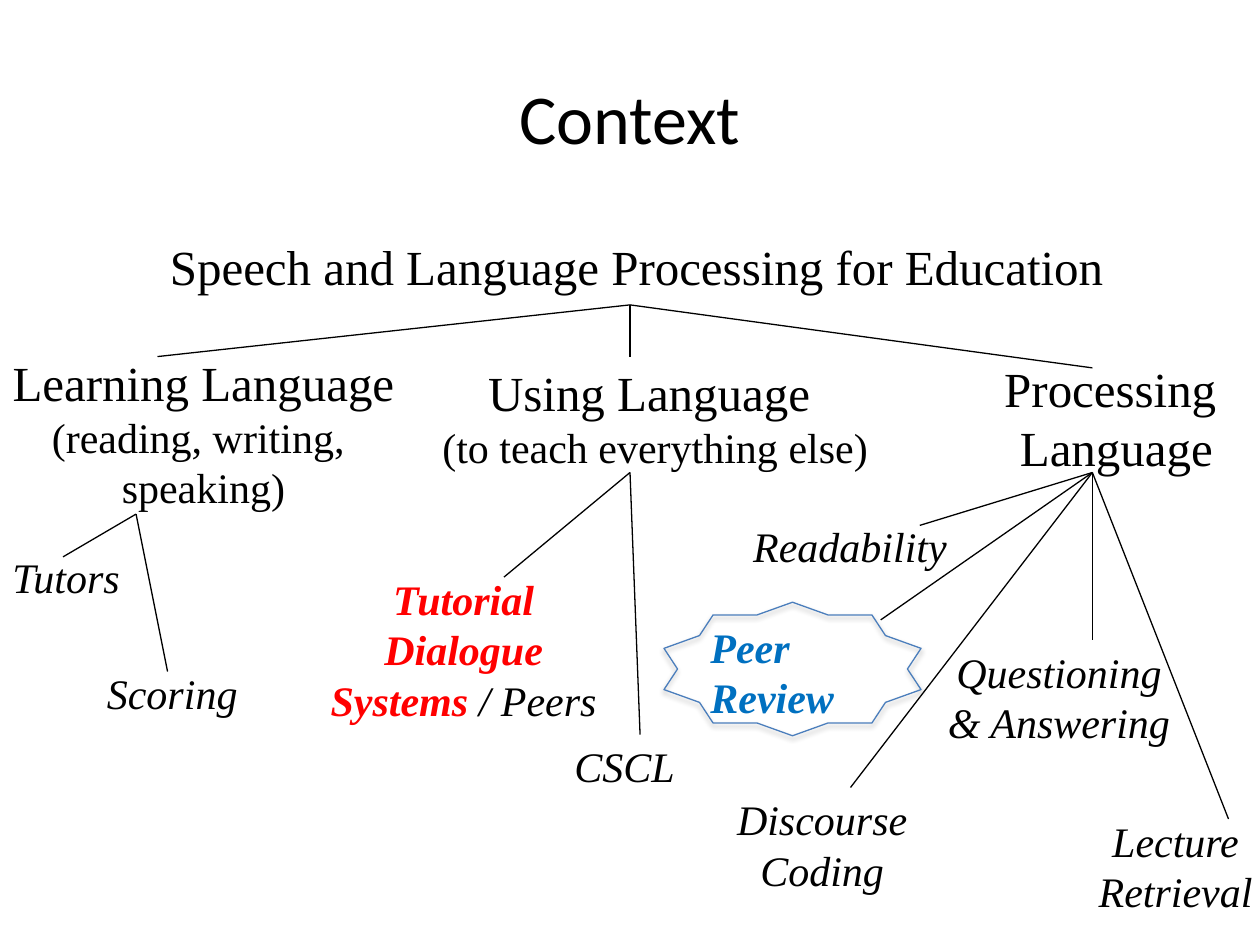
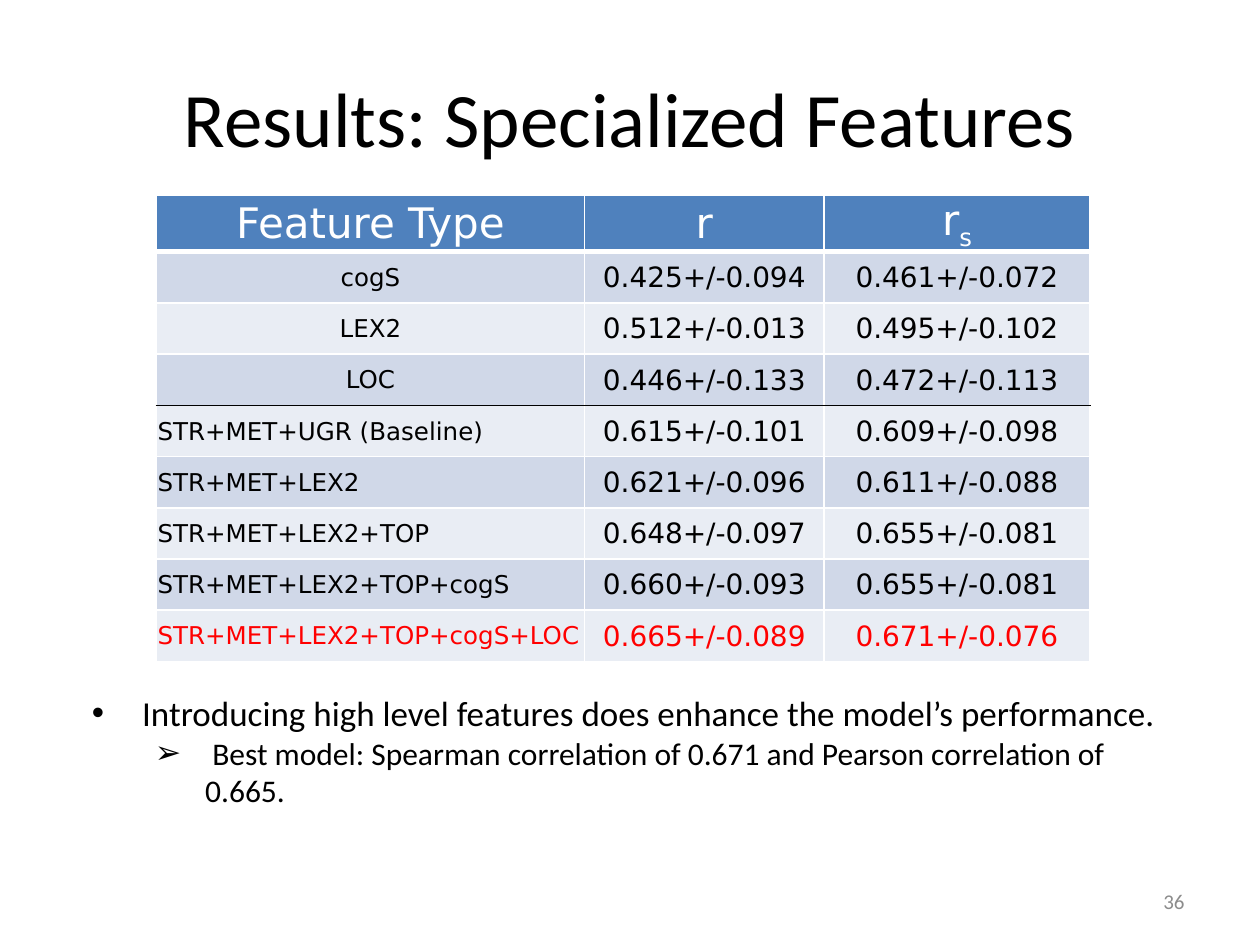
import lxml.etree
import pptx
import pptx.dml.color
import pptx.enum.shapes
import pptx.enum.text
import pptx.oxml.ns
import pptx.util

Inches = pptx.util.Inches
Pt = pptx.util.Pt
qn = pptx.oxml.ns.qn
Align = pptx.enum.text.PP_ALIGN
Anchor = pptx.enum.text.MSO_ANCHOR
Fit = pptx.enum.text.MSO_AUTO_SIZE


class Theme:
    sans, serif, grid, mark = "Calibri", "Times New Roman", "DejaVu Sans", "Arial"
    black, white, red, blue = "000000", "FFFFFF", "FF0000", "0070C0"
    gray, edge, head = "8C8C8C", "4B7EBC", "4F81BD"
    bands = ("D0D8E8", "E9EDF4")
    topic, leaf = 28, 24
    point, detail, page = 20, 18, 12
    label, value = 14, 16
    rule = 0.75


def tint(code):
    return pptx.dml.color.RGBColor.from_string(code)


def child(node, tag, **attrs):
    return lxml.etree.SubElement(node, qn(tag), attrs)


def style(run, size=Theme.leaf, font=Theme.serif, color=Theme.black,
          bold=False, slant=False, base=None):
    run.font.size = Pt(size)
    run.font.name = font
    run.font.color.rgb = tint(color)
    run.font.bold = bold
    run.font.italic = slant
    if base:
        run.font._element.set("baseline", str(base * 1000))


def write(frame, lines, align=Align.LEFT, **look):
    for i, line in enumerate(lines):
        para = frame.paragraphs[0] if i == 0 else frame.add_paragraph()
        para.alignment = align
        parts = [(line, {})] if isinstance(line, str) else line
        for words, extra in parts:
            run = para.add_run()
            run.text = words
            style(run, **{**look, **extra})


def text(slide, box, *lines, wrap=True, grow=False, anchor=Anchor.TOP, **look):
    frame = slide.shapes.add_textbox(*map(Inches, box)).text_frame
    frame.word_wrap = wrap
    frame.auto_size = Fit.SHAPE_TO_FIT_TEXT if grow else Fit.NONE
    frame.vertical_anchor = anchor
    write(frame, lines, **look)
    return frame


def title(slide, words, size):
    text(slide, (0.5, 0.3, 9, 1.25), words, size=size, font=Theme.sans,
         align=Align.CENTER, anchor=Anchor.MIDDLE)


def branch(slide, start, end):
    line = slide.shapes.add_connector(
        pptx.enum.shapes.MSO_CONNECTOR.STRAIGHT, *map(Inches, (*start, *end)))
    line.line.color.rgb = tint(Theme.black)
    line.line.width = Pt(Theme.rule)
    child(line._element.spPr, "a:effectLst")


def star(slide, box):
    shape = slide.shapes.add_shape(
        pptx.enum.shapes.MSO_SHAPE.STAR_10_POINT, *map(Inches, box))
    shape.fill.background()
    shape.line.color.rgb = tint(Theme.edge)
    shape.line.width = Pt(Theme.rule)
    shape.shadow.inherit = False
    effects = shape._element.spPr.find(qn("a:effectLst"))
    shade = child(effects, "a:outerShdw", blurRad=str(Pt(3.1)),
                  dist=str(Pt(1.8)), dir="5400000", rotWithShape="0")
    color = child(shade, "a:srgbClr", val=Theme.black)
    child(color, "a:alpha", val="35000")


def tree(slide, box):
    left, top = box[:2]
    mid = Align.CENTER
    big = {"size": Theme.topic}
    plain = {"color": Theme.black, "bold": False}
    topics = [
        ((1.25, 0.08, 7.69, 0.57), Align.LEFT,
         [[("Speech and Language Processing for Education", big)]]),
        ((0, 1, 3.23, 1.77), mid,
         [[("Learning Language", big)], "(reading, writing, ", "speaking)"]),
        ((3.3, 1.08, 3.8, 0.97), mid,
         [[("Using Language ", big)], "(to teach everything else)"]),
        ((7.87, 1.05, 1.98, 1.03), mid,
         [[("Processing ", big)], [("Language", big)]]),
    ]
    leaves = [
        ((0, 2.58, 1.07, 0.5), Align.LEFT, ["Tutors"]),
        ((0.75, 3.5, 1.24, 0.5), Align.LEFT, ["Scoring"]),
        ((5.88, 2.33, 1.9, 0.5), Align.LEFT, ["Readability"]),
        ((4.46, 4.08, 1.08, 0.5), Align.LEFT, ["CSCL"]),
        ((5.75, 4.5, 1.55, 0.9), mid, ["Discourse", "Coding"]),
        ((8.62, 4.67, 1.42, 0.9), mid, ["Lecture", "Retrieval"]),
        ((7.42, 3.33, 1.97, 0.9), mid, ["Questioning", "& Answering"]),
    ]
    strong = [
        ((2.38, 2.75, 2.6, 1.31), mid, Theme.red,
         ["Tutorial Dialogue", [("Systems ", {}), ("/ Peers", plain)]]),
        ((5.54, 3.13, 1.8, 0.91), Align.LEFT, Theme.blue, ["Peer Review"]),
    ]
    forks = {
        (5, 0.67): [(1.25, 1.08), (5, 1.08), (8.67, 1.17)],
        (1.08, 2.33): [(0.5, 2.67), (1.33, 3.58)],
        (5, 2): [(4, 2.83), (5.08, 4.08)],
        (8.67, 2): [(7.3, 2.42), (8.67, 3.33), (6.75, 4.5), (9.75, 4.75),
                    (6.99, 3.17)],
    }

    def shift(x, y, *size):
        return left + x, top + y, *size

    for group, slant in ((topics, False), (leaves, True)):
        for spot, align, lines in group:
            text(slide, shift(*spot), *lines, wrap=False, grow=True,
                 align=align, slant=slant)
    for spot, align, color, lines in strong:
        text(slide, shift(*spot), *lines, grow=True, align=align,
             color=color, bold=True, slant=True)
    for hub, ends in forks.items():
        for end in ends:
            branch(slide, shift(*hub), shift(*end))
    star(slide, shift(5.27, 3.03, 2.04, 1.06))


def border(cell, **sides):
    props = cell._tc.get_or_add_tcPr()
    for i, side in enumerate("LRTB"):
        color, width = sides.get(side, (Theme.white, 1))
        line = child(props, f"a:ln{side}", w=str(Pt(width)))
        fill = child(line, "a:solidFill")
        child(fill, "a:srgbClr", val=color)
        props.insert(i, line)


def fill(cell, line, shade, sides, **look):
    cell.fill.solid()
    cell.fill.fore_color.rgb = tint(shade)
    cell.vertical_anchor = Anchor.MIDDLE
    cell.margin_left = cell.margin_right = cell.margin_top = Inches(0.01)
    cell.margin_bottom = 0
    write(cell.text_frame, [line], font=Theme.grid, **look)
    border(cell, **sides)


def scores(slide, box):
    heads = ["Feature Type", "r", [("r", {}), ("s", {"base": -25})]]
    rows = [
        ("cogS", "0.425+/-0.094", "0.461+/-0.072"),
        ("LEX2", "0.512+/-0.013", "0.495+/-0.102"),
        ("LOC", "0.446+/-0.133", "0.472+/-0.113"),
        ("STR+MET+UGR (Baseline)", "0.615+/-0.101", "0.609+/-0.098"),
        ("STR+MET+LEX2", "0.621+/-0.096", "0.611+/-0.088"),
        ("STR+MET+LEX2+TOP", "0.648+/-0.097", "0.655+/-0.081"),
        ("STR+MET+LEX2+TOP+cogS", "0.660+/-0.093", "0.655+/-0.081"),
        ("STR+MET+LEX2+TOP+cogS+LOC", "0.665+/-0.089", "0.671+/-0.076"),
    ]
    single = 3
    table = slide.shapes.add_table(
        len(rows) + 1, len(heads), *map(Inches, box)).table
    for col, width in zip(table.columns, (3.4, 1.9, 2.11)):
        col.width = Inches(width)
    for row in table.rows:
        row.height = Inches(box[3] / (len(rows) + 1))
    for c, head in enumerate(heads):
        fill(table.cell(0, c), head, Theme.head, {"B": (Theme.white, 3)},
             size=Theme.leaf, color=Theme.white, align=Align.CENTER)
    for r, row in enumerate(rows, 1):
        sides = {single: {"B": (Theme.black, 1)},
                 single + 1: {"T": (Theme.black, 1)}}.get(r, {})
        color = Theme.red if r == len(rows) else Theme.black
        for c, words in enumerate(row):
            combo = c == 0 and r > single
            fill(table.cell(r, c), words, Theme.bands[(r - 1) % 2], sides,
                 size=Theme.value if c else Theme.label, color=color,
                 align=Align.LEFT if combo else Align.CENTER)


def bullet(para, mark, indent):
    props = para._p.get_or_add_pPr()
    props.set("marL", str(Inches(indent)))
    props.set("indent", str(Inches(-0.4)))
    child(props, "a:buFont", typeface=Theme.mark)
    child(props, "a:buChar", char=mark)


def notes(slide, box):
    frame = text(
        slide, box,
        "Introducing high level features does enhance the model’s performance.",
        [(" Best model: Spearman correlation of 0.671 and Pearson correlation"
          " of 0.665.", {"size": Theme.detail})],
        size=Theme.point, font=Theme.sans)
    main, sub = frame.paragraphs
    sub.level = 1
    sub.space_after = Pt(6)
    bullet(main, "•", 0.78)
    bullet(sub, "➢", 1.28)


def footer(slide, page):
    text(slide, (7.17, 6.95, 2.33, 0.4), page, size=Theme.page,
         font=Theme.sans, color=Theme.gray, align=Align.RIGHT,
         anchor=Anchor.MIDDLE)


def main():
    deck = pptx.Presentation()
    deck.slide_width, deck.slide_height = Inches(10), Inches(7.5)
    blank = deck.slide_layouts[6]

    slide = deck.slides.add_slide(blank)
    title(slide, "Context", 40)
    tree(slide, (0, 1.75, 10, 5.75))

    slide = deck.slides.add_slide(blank)
    title(slide, "Results: Specialized Features", 44)
    footer(slide, "36")
    notes(slide, (0.25, 5.44, 9.25, 1.8))
    scores(slide, (1.24, 1.55, 7.41, 3.66))

    deck.save("out.pptx")


if __name__ == "__main__":
    main()
